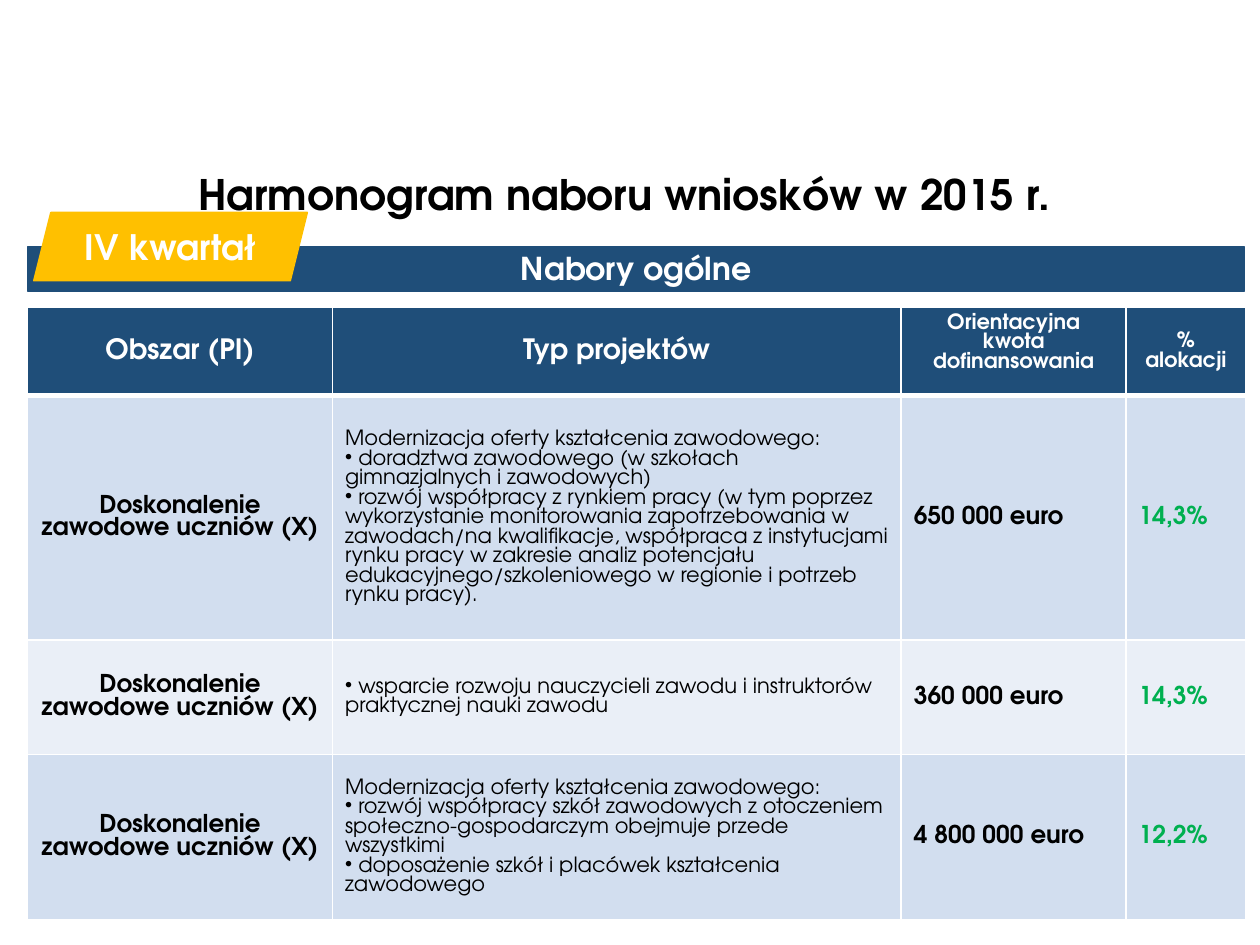
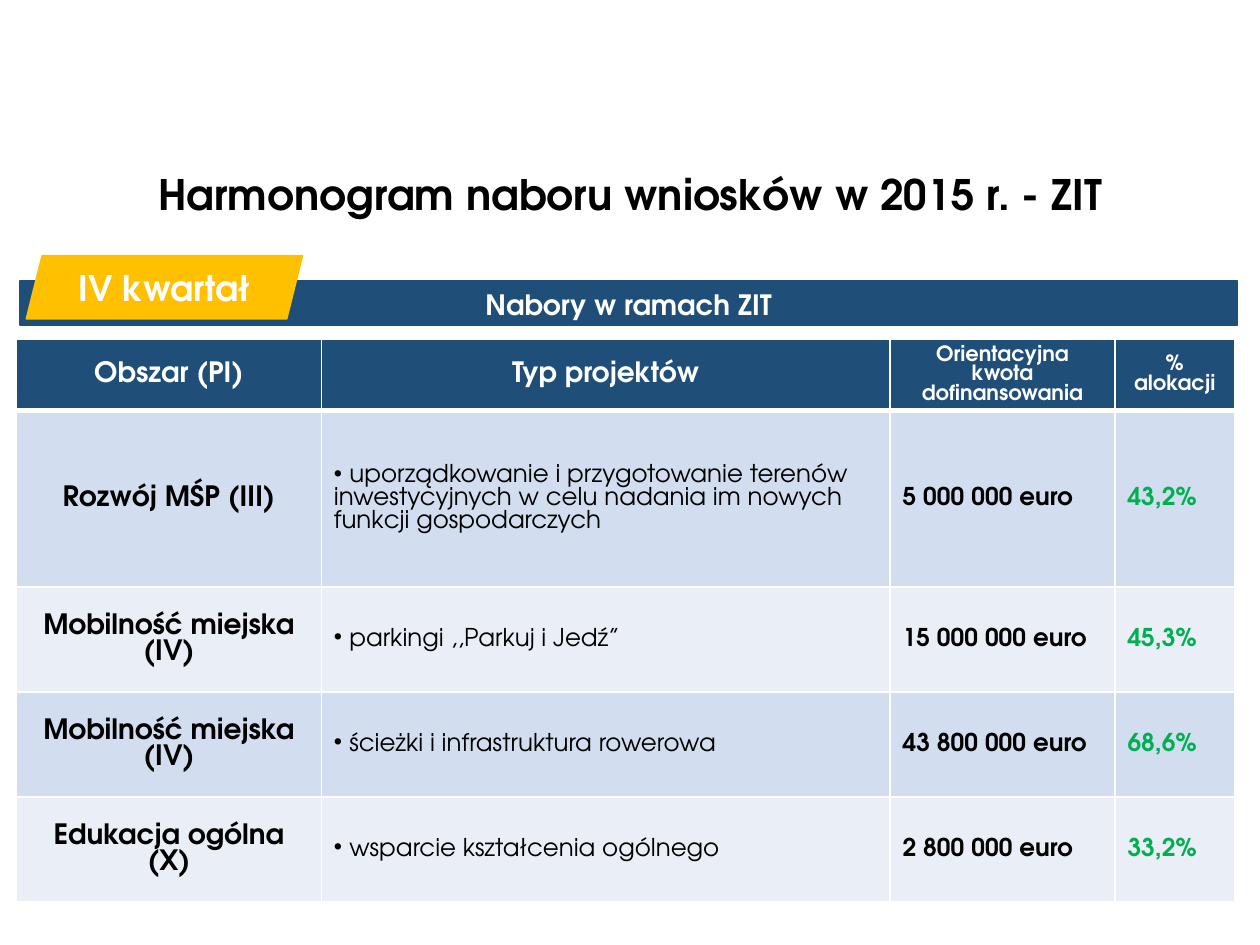
from dataclasses import dataclass

from lxml import etree
from pptx import Presentation
from pptx.dml.color import RGBColor
from pptx.enum.shapes import MSO_SHAPE
from pptx.enum.text import MSO_ANCHOR, MSO_AUTO_SIZE, PP_ALIGN
from pptx.oxml.ns import qn
from pptx.util import Pt

LEFT, CENTER = PP_ALIGN.LEFT, PP_ALIGN.CENTER
TOP, MIDDLE = MSO_ANCHOR.TOP, MSO_ANCHOR.MIDDLE
RECTANGLE, PARALLELOGRAM = MSO_SHAPE.RECTANGLE, MSO_SHAPE.PARALLELOGRAM
TITLE_ONLY = 5


@dataclass(frozen=True)
class Theme:
    font: str = "TeX Gyre Adventor"
    navy: str = "1F4E79"
    amber: str = "FFC000"
    green: str = "00B050"
    black: str = "000000"
    white: str = "FFFFFF"
    stripes: tuple = ("D2DEEF", "EAEFF7")
    title_size: float = 24
    tag_size: float = 20
    header_size: float = 16
    small_header_size: float = 12
    amount_size: float = 14


THEME = Theme()
COLUMN_WIDTHS = (174.2, 325, 128.5, 68.4)
HEADERS = ("Obszar (PI)", "Typ projektów", "Orientacyjna kwota dofinansowania", "% alokacji")
TRAINING = "Doskonalenie zawodowe uczniów (X)"
OFFER = "Modernizacja oferty kształcenia zawodowego:"
MOBILITY = "Mobilność miejska (IV)"

PAGES = [
    {
        "title": "Harmonogram naboru wniosków w 2015 r. ",
        "table_at": (15.8, 175.7),
        "band": "Nabory ogólne",
        "band_at": (15.8, 141.1, 695.5, 25.2),
        "band_size": 18,
        "band_spacing": 0.9,
        "tag_at": (19.4, 121.5, 156.2, 38.9),
        "amount_header_anchor": TOP,
        "area_size": 14,
        "type_size": 12,
        "row_heights": (50.4, 139.7, 65.5, 94.3),
        "rows": [
            (TRAINING, [
                OFFER,
                "• doradztwa zawodowego (w szkołach gimnazjalnych i zawodowych)",
                "• rozwój współpracy z rynkiem pracy (w tym poprzez wykorzystanie monitorowania "
                "zapotrzebowania w zawodach/na kwalifikacje, współpraca z instytucjami rynku pracy "
                "w zakresie analiz potencjału edukacyjnego/szkoleniowego w regionie i potrzeb "
                "rynku pracy).",
            ], "650 000 euro", "14,3%"),
            (TRAINING, [
                "• wsparcie rozwoju nauczycieli zawodu i instruktorów praktycznej nauki zawodu",
            ], "360 000 euro", "14,3%"),
            (TRAINING, [
                OFFER,
                "• rozwój współpracy szkół zawodowych z otoczeniem społeczno-gospodarczym "
                "obejmuje przede wszystkimi",
                "• doposażenie szkół i placówek kształcenia zawodowego",
            ], "4 800 000 euro", "12,2%"),
        ],
    },
    {
        "title": "Harmonogram naboru wniosków w 2015 r. - ZIT",
        "table_at": (9.4, 193.7),
        "band": "Nabory w ramach ZIT",
        "band_at": (11.5, 160.6, 695.5, 25.2),
        "band_size": 16,
        "band_spacing": 1.0,
        "tag_at": (15.1, 146.2, 157.7, 36),
        "amount_header_anchor": MIDDLE,
        "area_size": 16,
        "type_size": 14,
        "row_heights": (41, 100.8, 60, 60, 60),
        "rows": [
            ("Rozwój MŚP (III)", [
                "• uporządkowanie i przygotowanie terenów inwestycyjnych w celu nadania im "
                "nowych funkcji gospodarczych",
            ], "5 000 000 euro", "43,2%"),
            (MOBILITY, ["• parkingi ,,Parkuj i Jedź”"], "15 000 000 euro", "45,3%"),
            (MOBILITY, ["• ścieżki i infrastruktura rowerowa"], "43 800 000 euro", "68,6%"),
            ("Edukacja ogólna (X)", ["• wsparcie kształcenia ogólnego"],
             "2 800 000 euro", "33,2%"),
        ],
    },
]


def write(frame, lines, size, color, align=CENTER, bold=True, spacing=1.0):
    frame.word_wrap = True
    for index, line in enumerate(lines):
        para = frame.paragraphs[0] if index == 0 else frame.add_paragraph()
        para.text = line.removeprefix("•")
        para.alignment = align
        para.line_spacing = spacing
        if line.startswith("•"):
            properties = para._p.get_or_add_pPr()
            properties.set("marL", "0")
            properties.set("indent", "0")
            etree.SubElement(properties, qn("a:buChar"), char="•")
        for span in para.runs:
            span.font.name = THEME.font
            span.font.size = Pt(size)
            span.font.bold = bold
            span.font.color.rgb = RGBColor.from_string(color)


def style_cell(cell, fill, top, bottom):
    properties = cell._tc.get_or_add_tcPr()
    for side, width in (("lnL", 1), ("lnR", 1), ("lnT", top), ("lnB", bottom)):
        line = etree.SubElement(properties, qn(f"a:{side}"), w=str(Pt(width)))
        paint = etree.SubElement(line, qn("a:solidFill"))
        etree.SubElement(paint, qn("a:srgbClr"), val=THEME.white)
    cell.fill.solid()
    cell.fill.fore_color.rgb = RGBColor.from_string(fill)
    cell.vertical_anchor = MIDDLE


deck = Presentation()
deck.slide_width, deck.slide_height = Pt(720), Pt(540)

for content in PAGES:
    page = deck.slides.add_slide(deck.slide_layouts[TITLE_ONLY])

    title = page.shapes.title
    title.left, title.top, title.width, title.height = Pt(49.7), Pt(75.6), Pt(620.6), Pt(73.4)
    title.text_frame.auto_size = MSO_AUTO_SIZE.NONE
    title.text_frame.vertical_anchor = MIDDLE
    write(title.text_frame, [content["title"]], THEME.title_size, THEME.black, spacing=0.9)

    heights = content["row_heights"]
    left, top = content["table_at"]
    table = page.shapes.add_table(
        len(heights), len(COLUMN_WIDTHS), Pt(left), Pt(top),
        Pt(sum(COLUMN_WIDTHS)), Pt(sum(heights))).table
    for column, width in zip(table.columns, COLUMN_WIDTHS):
        column.width = Pt(width)
    for row, height in zip(table.rows, heights):
        row.height = Pt(height)

    for column, header in enumerate(HEADERS):
        cell = table.cell(0, column)
        style_cell(cell, THEME.navy, 1, 3)
        size = THEME.header_size if column < 2 else THEME.small_header_size
        write(cell.text_frame, [header], size, THEME.white)
    table.cell(0, 2).vertical_anchor = content["amount_header_anchor"]

    for number, (area, types, amount, share) in enumerate(content["rows"], start=1):
        cells = table.rows[number].cells
        for cell in cells:
            style_cell(cell, THEME.stripes[(number - 1) % 2], 3 if number == 1 else 1, 1)
        area_cell, type_cell, amount_cell, share_cell = cells
        write(area_cell.text_frame, [area], content["area_size"], THEME.black)
        write(type_cell.text_frame, types, content["type_size"], THEME.black, LEFT, bold=False)
        write(amount_cell.text_frame, [amount], THEME.amount_size, THEME.black, LEFT)
        write(share_cell.text_frame, [share], THEME.amount_size, THEME.green, LEFT)

    for kind, place, color, weight, anchor, text, size, spacing in (
        (RECTANGLE, content["band_at"], THEME.navy, 0.75, TOP,
         content["band"], content["band_size"], content["band_spacing"]),
        (PARALLELOGRAM, content["tag_at"], THEME.amber, 1, MIDDLE,
         "IV kwartał", THEME.tag_size, 1.0),
    ):
        box = page.shapes.add_shape(kind, *map(Pt, place))
        box.shadow.inherit = False
        box.fill.solid()
        box.fill.fore_color.rgb = RGBColor.from_string(color)
        box.line.color.rgb = RGBColor.from_string(color)
        box.line.width = Pt(weight)
        box.text_frame.vertical_anchor = anchor
        write(box.text_frame, [text], size, THEME.white, spacing=spacing)

deck.save("out.pptx")
